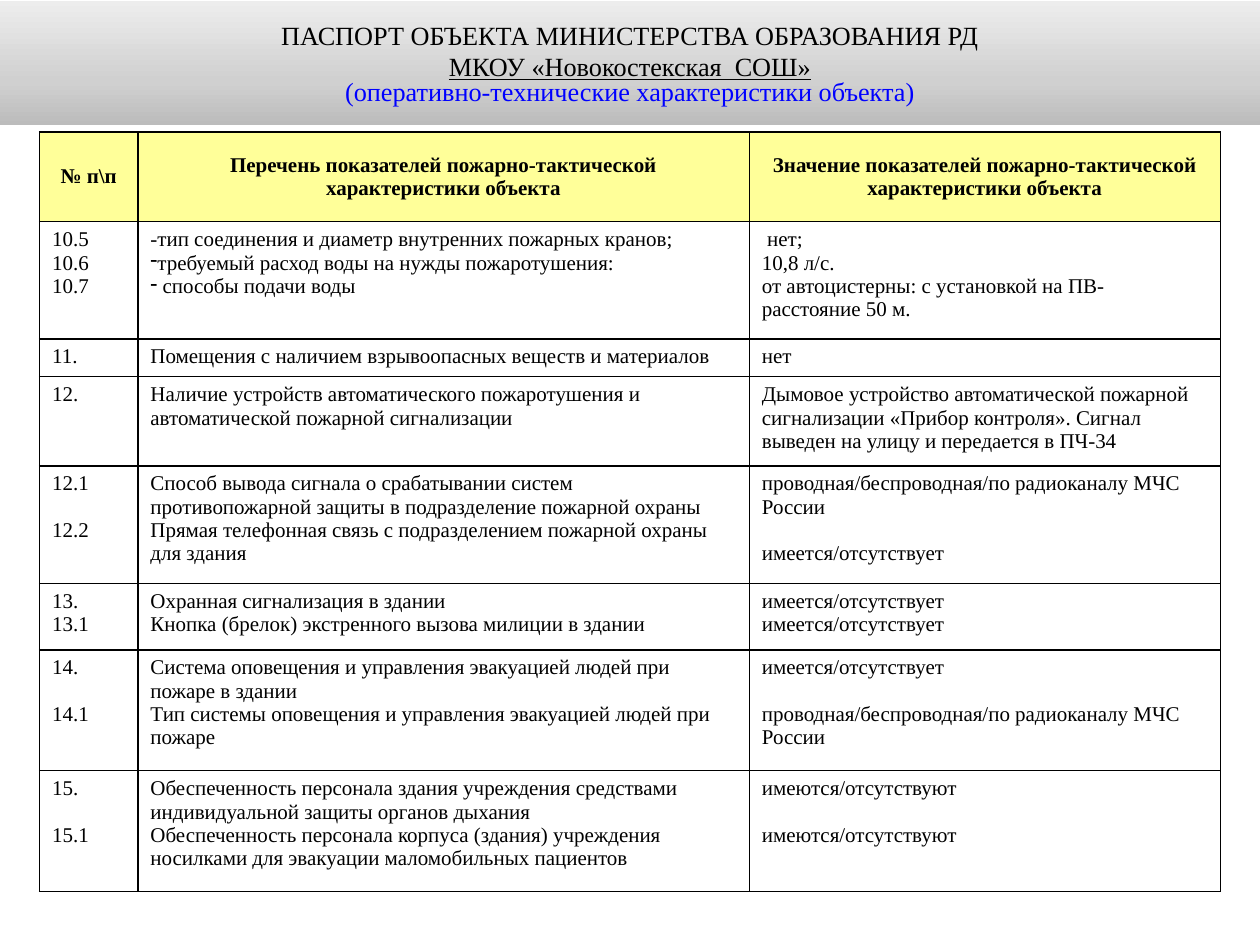
from copy import deepcopy
from dataclasses import dataclass

from lxml.etree import SubElement
from pptx import Presentation
from pptx.dml.color import RGBColor as RGB
from pptx.enum.shapes import MSO_SHAPE as Shape
from pptx.enum.text import MSO_ANCHOR as Anchor, PP_ALIGN as Align
from pptx.oxml.ns import qn
from pptx.util import Pt


@dataclass(frozen=True)
class Theme:
    font: str = "Times New Roman"
    title_size: int = 15
    table_size: int = 12
    line_gap: float = 13.3  # height of one table text line
    border: int = 1
    text: str = "000000"
    accent: str = "0000FF"
    header: str = "FFFF99"
    body: str = "FFFFFF"
    band: tuple = ((0, "BCBCBC"), (0.35, "D0D0D0"), (1, "EDEDED"))


@dataclass(frozen=True)
class Line:
    text: str
    gap: bool = False
    bullet: bool = False


THEME = Theme()

# Content
TITLE = [
    {"text": "ПАСПОРТ ОБЪЕКТА МИНИСТЕРСТВА ОБРАЗОВАНИЯ РД"},
    {"text": "МКОУ «Новокостекская  СОШ»", "underline": True},
    {"text": "(оперативно-технические характеристики объекта)",
     "color": THEME.accent, "spacing": 0.8},
]
HEADER = [
    ["№ п\\п"],
    ["Перечень показателей пожарно-тактической характеристики объекта"],
    ["Значение показателей пожарно-тактической характеристики объекта"],
]
ROWS = [
    [["10.5", "10.6", "10.7"],
     ["-тип соединения и диаметр внутренних пожарных кранов;",
      Line("требуемый расход воды на нужды пожаротушения:", bullet=True),
      Line(" способы подачи воды", bullet=True)],
     [" нет;", "10,8 л/с.",
      "от автоцистерны: с установкой на ПВ- расстояние 50 м."]],
    [["11."],
     ["Помещения с наличием взрывоопасных веществ и материалов"],
     ["нет"]],
    [["12."],
     ["Наличие устройств автоматического пожаротушения и "
      "автоматической пожарной сигнализации"],
     ["Дымовое устройство автоматической пожарной сигнализации "
      "«Прибор контроля». Сигнал выведен на улицу и передается в ПЧ-34"]],
    [["12.1", Line("12.2", gap=True)],
     ["Способ вывода сигнала о срабатывании систем противопожарной защиты "
      "в подразделение пожарной охраны",
      "Прямая телефонная связь с подразделением пожарной охраны для здания"],
     ["проводная/беспроводная/по радиоканалу МЧС России",
      Line("имеется/отсутствует", gap=True)]],
    [["13.", "13.1"],
     ["Охранная сигнализация в здании",
      "Кнопка (брелок) экстренного вызова милиции в здании"],
     ["имеется/отсутствует", "имеется/отсутствует"]],
    [["14.", Line("14.1", gap=True)],
     ["Система оповещения и управления эвакуацией людей при пожаре в здании",
      "Тип системы оповещения и управления эвакуацией людей при пожаре"],
     ["имеется/отсутствует",
      Line("проводная/беспроводная/по радиоканалу МЧС России", gap=True)]],
    [["15.", Line("15.1", gap=True)],
     ["Обеспеченность персонала здания учреждения средствами "
      "индивидуальной защиты органов дыхания",
      "Обеспеченность персонала корпуса (здания) учреждения носилками "
      "для эвакуации маломобильных пациентов"],
     ["имеются/отсутствуют", Line("имеются/отсутствуют", gap=True)]],
]

# Layout
SLIDE = (720, 540)
BAND = (0, 0.6, 720, 70.8)
TABLE_AT = (22.6, 75.5)
COLUMNS = [56.2, 349.4, 269.2]
HEIGHTS = [51.2, 66.9, 21.7, 51, 67.2, 38, 69, 69]


def style_font(font, size, color=THEME.text, bold=False):
    font.name, font.size, font.bold = THEME.font, Pt(size), bold
    font.color.rgb = RGB.from_string(color)


def add_bullet(para):
    properties = para._p.get_or_add_pPr()
    properties.set("marL", "0")
    properties.set("indent", "0")
    SubElement(properties, qn("a:buFontTx"))
    SubElement(properties, qn("a:buChar"), char="-")


def add_borders(cell):
    properties = cell._tc.get_or_add_tcPr()
    for side in "LRTB":
        line = SubElement(properties, qn(f"a:ln{side}"), w=str(Pt(THEME.border)))
        fill = SubElement(line, qn("a:solidFill"))
        SubElement(fill, qn("a:srgbClr"), val=THEME.text)


def fill_cell(cell, lines, is_header):
    add_borders(cell)
    cell.fill.solid()
    cell.fill.fore_color.rgb = RGB.from_string(THEME.header if is_header else THEME.body)
    cell.vertical_anchor = Anchor.MIDDLE if is_header else Anchor.TOP
    lines = [Line(line) if isinstance(line, str) else line for line in lines]
    cell.text_frame.text = "\n".join(line.text for line in lines)
    for para, line in zip(cell.text_frame.paragraphs, lines):
        para.alignment = Align.CENTER if is_header else Align.LEFT
        if line.gap:
            para.space_before = Pt(THEME.line_gap)
        if line.bullet:
            add_bullet(para)
        for span in para.runs:
            style_font(span.font, THEME.table_size, bold=is_header)


def add_passport_table(page):
    grid = [HEADER] + ROWS
    size = (sum(COLUMNS), sum(HEIGHTS))
    table = page.shapes.add_table(
        len(grid), len(COLUMNS), *map(Pt, TABLE_AT + size)).table
    table.first_row = table.horz_banding = False
    for column, width in zip(table.columns, COLUMNS):
        column.width = Pt(width)
    for index, (row, height) in enumerate(zip(table.rows, HEIGHTS)):
        row.height = Pt(height)
        for cell, lines in zip(row.cells, grid[index]):
            fill_cell(cell, lines, is_header=index == 0)


def add_title_band(page):
    band = page.shapes.add_shape(Shape.RECTANGLE, *map(Pt, BAND))
    band.shadow.inherit = False
    band.line.fill.background()

    # Three-stop gradient, running from the bottom up
    band.fill.gradient()
    band.fill.gradient_angle = 90
    stop_list = band._element.spPr.find(".//" + qn("a:gsLst"))
    stop_list.append(deepcopy(stop_list[-1]))
    for stop, (position, color) in zip(band.fill.gradient_stops, THEME.band):
        stop.position = position
        stop.color.rgb = RGB.from_string(color)

    frame = band.text_frame
    frame.word_wrap = True
    frame.vertical_anchor = Anchor.MIDDLE
    frame.text = "\n".join(line["text"] for line in TITLE)
    for para, line in zip(frame.paragraphs, TITLE):
        para.alignment = Align.CENTER
        para.line_spacing = line.get("spacing", 1.0)
        for span in para.runs:
            style_font(span.font, THEME.title_size, line.get("color", THEME.text))
            span.font.underline = line.get("underline", False)


def main():
    deck = Presentation()
    deck.slide_width, deck.slide_height = map(Pt, SLIDE)
    page = deck.slides.add_slide(deck.slide_layouts[6])
    add_passport_table(page)
    add_title_band(page)
    deck.save("out.pptx")


if __name__ == "__main__":
    main()
